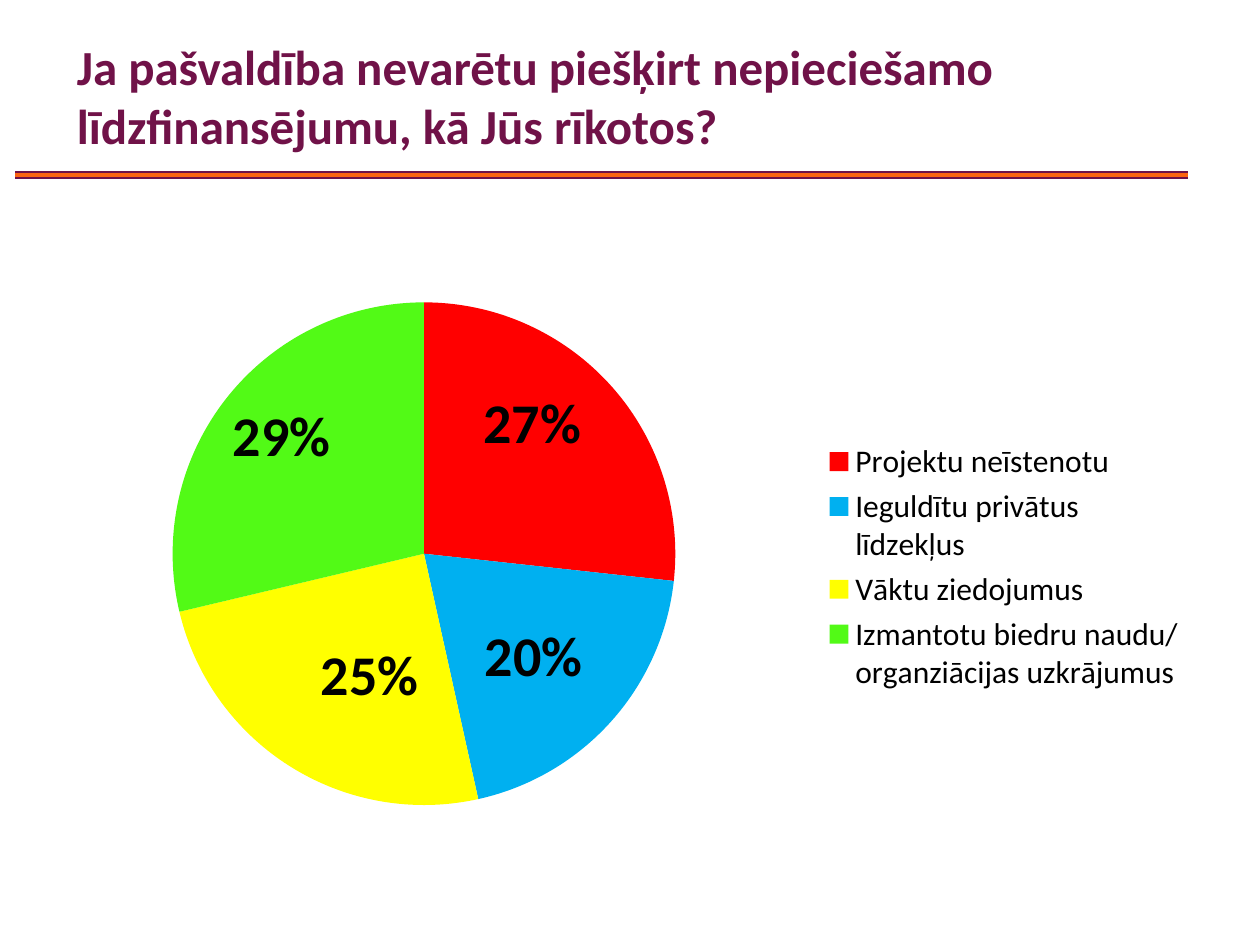
from lxml.etree import SubElement
from pptx import Presentation
from pptx.chart.data import CategoryChartData
from pptx.dml.color import RGBColor
from pptx.enum.chart import XL_CHART_TYPE, XL_LABEL_POSITION, XL_LEGEND_POSITION
from pptx.enum.shapes import MSO_CONNECTOR
from pptx.enum.text import MSO_ANCHOR, PP_ALIGN
from pptx.oxml import parse_xml
from pptx.oxml.ns import nsdecls, qn
from pptx.util import Inches, Pt

FONT = "Calibri"
COLORS = {
    "plum": "701248", "orange": "FC6410", "black": "000000",
    "red": "FF0000", "blue": "00B0F0", "yellow": "FFFF00", "green": "52FA16",
}
CHART_WIDTH, CHART_HEIGHT = Inches(9), Inches(4.95)
# answer, share, slice colour, label offset in inches
ANSWERS = [
    ("Projektu neīstenotu", 0.27, "red", (-0.19, -0.01)),
    ("Ieguldītu privātus līdzekļus", 0.20, "blue", (-0.18, -0.19)),
    ("Vāktu ziedojumus", 0.25, "yellow", (0.21, -0.39)),
    ("Izmantotu biedru naudu/ organziācijas uzkrājumus", 0.29, "green", None),
]


def style_font(font, size, color, bold=False):
    font.name, font.size, font.bold = FONT, Pt(size), bold
    font.color.rgb = RGBColor.from_string(COLORS[color])


def manual_layout(x, y, w=None, h=None, **modes):
    """Return a c:layout element for lengths in inches measured within the chart."""
    layout = parse_xml(f"<c:layout {nsdecls('c')}/>")
    manual = SubElement(layout, qn("c:manualLayout"))
    for name, value in modes.items():
        SubElement(manual, qn(f"c:{name}")).set("val", value)
    lengths = {"x": (x, CHART_WIDTH), "y": (y, CHART_HEIGHT),
               "w": (w, CHART_WIDTH), "h": (h, CHART_HEIGHT)}
    for name, (length, whole) in lengths.items():
        if length is not None:
            SubElement(manual, qn(f"c:{name}")).set("val", str(Inches(length) / whole))
    return layout


deck = Presentation()
deck.slide_width, deck.slide_height = Inches(10), Inches(7.5)
slide = deck.slides.add_slide(deck.slide_layouts[5])

# Two-tone rule under the title
for color, width in (("plum", 4.5), ("orange", 2.25)):
    rule = slide.shapes.add_connector(
        MSO_CONNECTOR.STRAIGHT, Inches(0.12), Inches(1.39), Inches(9.43), Inches(1.39))
    rule.line.color.rgb = RGBColor.from_string(COLORS[color])
    rule.line.width = Pt(width)
    SubElement(rule._element.spPr, qn("a:effectLst"))

# Title
title = slide.shapes.title
title.left, title.top = Inches(0.51), Inches(0.13)
title.width, title.height = Inches(8.92), Inches(1.26)
title.text_frame.word_wrap = True
title.text_frame.vertical_anchor = MSO_ANCHOR.MIDDLE
para = title.text_frame.paragraphs[0]
para.alignment = PP_ALIGN.LEFT
span = para.add_run()
span.text = "Ja pašvaldība nevarētu piešķirt nepieciešamo līdzfinansējumu, kā Jūs rīkotos?"
style_font(span.font, 28, "plum", bold=True)

# Pie chart
data = CategoryChartData(number_format="0%")
data.categories = [answer[0] for answer in ANSWERS]
data.add_series("Series 1", [answer[1] for answer in ANSWERS])
chart = slide.shapes.add_chart(
    XL_CHART_TYPE.PIE, Inches(0.5), Inches(2.03), CHART_WIDTH, CHART_HEIGHT, data).chart
chart.has_title = False
style_font(chart.font, 18, "black")

plot = chart.plots[0]
plot.vary_by_categories = True
series = plot.series[0]
labels = series.data_labels
labels.show_value = True
labels.number_format, labels.number_format_is_linked = "0%", False
labels.position = XL_LABEL_POSITION.INSIDE_END
style_font(labels.font, 32, "black", bold=True)

for index, (_, _, color, offset) in enumerate(ANSWERS):
    point = series.points[index]
    point.format.fill.solid()
    point.format.fill.fore_color.rgb = RGBColor.from_string(COLORS[color])
    if offset:
        label = point.data_label
        style_font(label.font, 32, "black", bold=True)
        label.position = XL_LABEL_POSITION.INSIDE_END
        label_element = labels._element.findall(qn("c:dLbl"))[index]
        label_element.find(qn("c:idx")).addnext(manual_layout(*offset))

# Place the pie and the legend inside the chart
plot_area = chart._chartSpace.chart.plotArea
for old_layout in plot_area.findall(qn("c:layout")):
    plot_area.remove(old_layout)
plot_area.insert(0, manual_layout(
    0.87, 0.37, 3.99, 3.99, layoutTarget="inner", xMode="edge", yMode="edge"))

chart.has_legend = True
legend = chart.legend
legend.position = XL_LEGEND_POSITION.RIGHT
legend.include_in_layout = False
style_font(legend.font, 18, "black")
for old_layout in legend._element.findall(qn("c:layout")):
    legend._element.remove(old_layout)
legend._element.find(qn("c:legendPos")).addnext(manual_layout(
    6.11, 1.43, 2.82, 2.08, xMode="edge", yMode="edge"))

deck.save("out.pptx")
